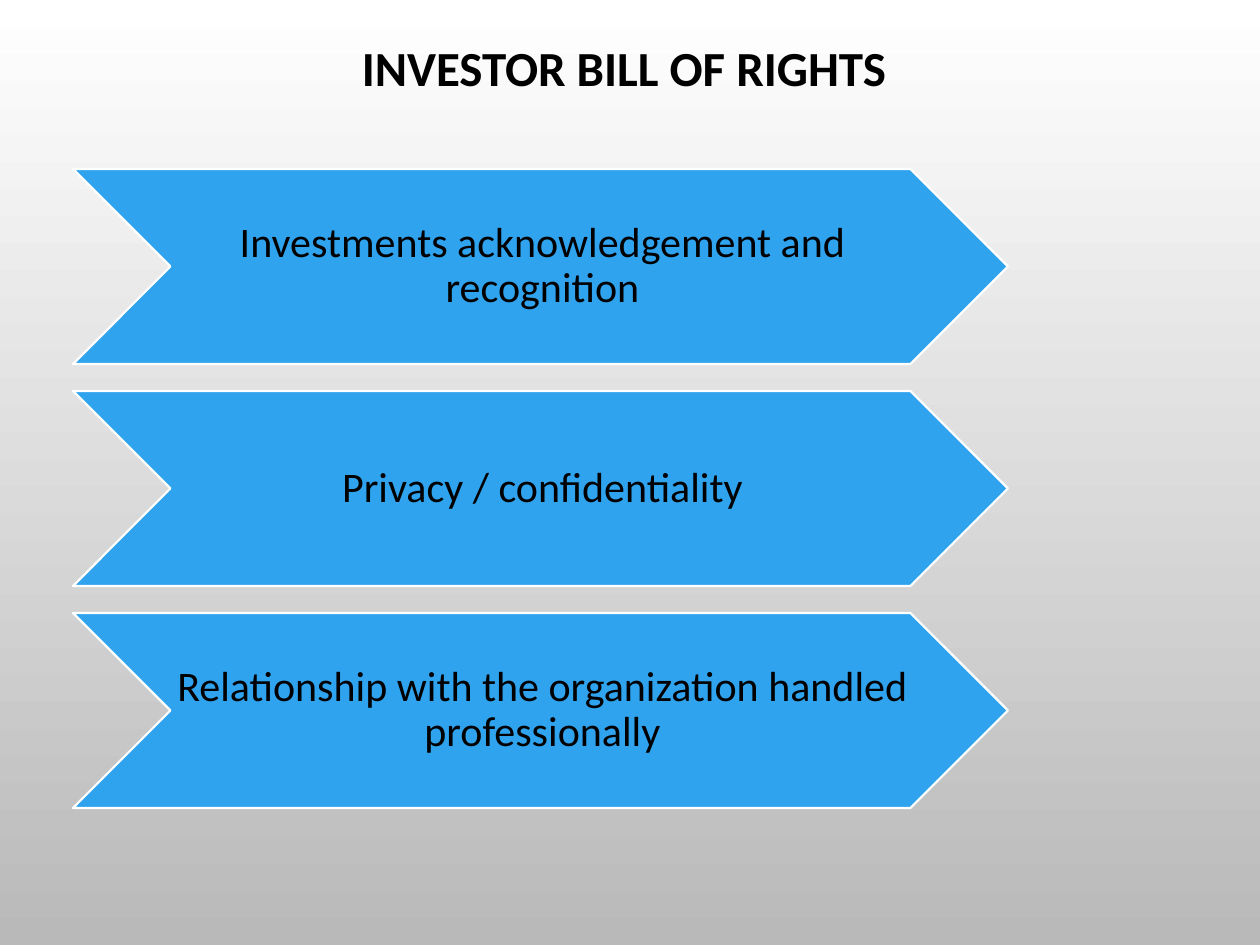
"""Build the Investor Bill of Rights slide with three stacked chevrons."""
from pptx import Presentation
from pptx.dml.color import RGBColor
from pptx.enum.shapes import MSO_SHAPE
from pptx.enum.text import MSO_ANCHOR, MSO_AUTO_SIZE, PP_ALIGN
from pptx.util import Emu, Pt

TITLE = "INVESTOR BILL OF RIGHTS"
RIGHTS = [
    "Investments acknowledgement and recognition",
    "Privacy / confidentiality",
    "Relationship with the organization handled professionally",
]
COLORS = {"text": "000000", "chevron": "2FA3EE", "outline": "FFFFFF",
          "top": "FFFFFF", "bottom": "B9B9B9"}
FONT = "Calibri"
SCALE = 914400 // 126
PAGE_SIZE = (1260, 945)
TITLE_BOX = (241, 21, 766, 100)
LEFT, TOP, WIDTH, HEIGHT, GAP = 73, 169, 935, 195, 27
INSETS = (4, 2, 0, 2)


def px(length):
    return Emu(length * SCALE)


def color(name):
    return RGBColor.from_string(COLORS[name])


def write_text(shape, text, size, bold=False, insets=None):
    frame = shape.text_frame
    frame.word_wrap = True
    frame.auto_size = MSO_AUTO_SIZE.NONE
    frame.vertical_anchor = MSO_ANCHOR.MIDDLE
    if insets:
        (frame.margin_left, frame.margin_top,
         frame.margin_right, frame.margin_bottom) = map(px, insets)
    para = frame.paragraphs[0]
    para.alignment = PP_ALIGN.CENTER
    para.line_spacing = 0.9
    span = para.add_run()
    span.text = text
    span.font.name = FONT
    span.font.size = Pt(size)
    span.font.bold = bold
    span.font.color.rgb = color("text")


def paint_background(page):
    fill = page.background.fill
    fill.gradient()
    fill.gradient_angle = 270
    for stop, name, position in zip(fill.gradient_stops, ("top", "bottom"), (0, 1)):
        stop.color.rgb = color(name)
        stop.position = position


def add_chevron(shapes, text, top):
    chevron = shapes.add_shape(
        MSO_SHAPE.CHEVRON, px(LEFT), px(top), px(WIDTH), px(HEIGHT))
    chevron.shadow.inherit = False
    chevron.fill.solid()
    chevron.fill.fore_color.rgb = color("chevron")
    chevron.line.color.rgb = color("outline")
    chevron.line.width = Pt(1.25)
    write_text(chevron, text, size=24, insets=INSETS)


def main():
    deck = Presentation()
    deck.slide_width, deck.slide_height = map(px, PAGE_SIZE)
    page = deck.slides.add_slide(deck.slide_layouts[5])
    paint_background(page)

    title = page.shapes.title
    title.left, title.top, title.width, title.height = map(px, TITLE_BOX)
    write_text(title, TITLE, size=28, bold=True)

    group = page.shapes.add_group_shape()
    for index, text in enumerate(RIGHTS):
        add_chevron(group.shapes, text, TOP + index * (HEIGHT + GAP))

    deck.save("out.pptx")


if __name__ == "__main__":
    main()
